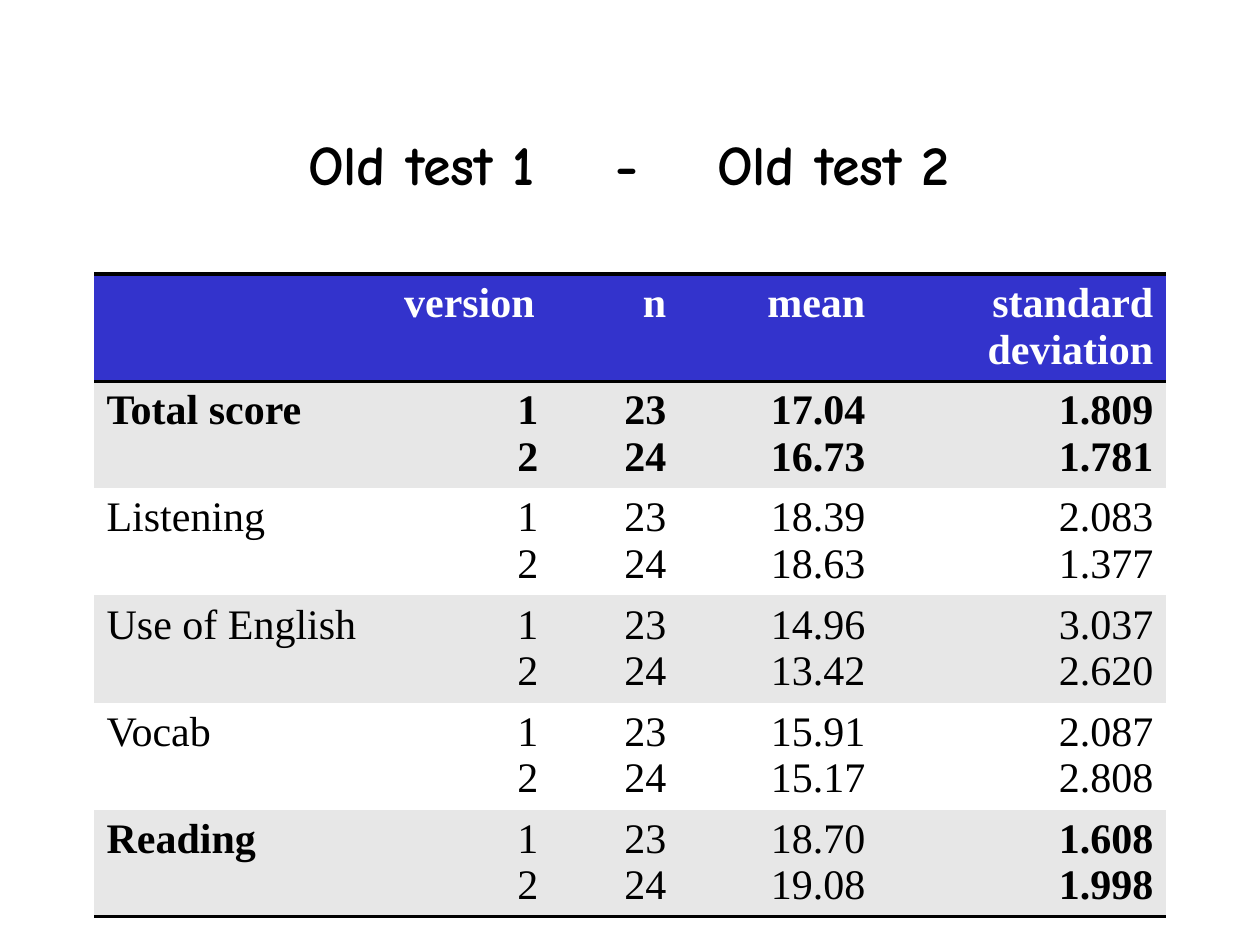
from dataclasses import dataclass

from lxml.etree import SubElement
from pptx import Presentation
from pptx.dml.color import RGBColor
from pptx.enum.text import MSO_ANCHOR, PP_ALIGN
from pptx.oxml import parse_xml
from pptx.oxml.ns import nsdecls, qn
from pptx.util import Emu, Pt

PX_PER_INCH = 126
BLACK, WHITE, BLUE, GREY = "000000", "FFFFFF", "3333CC", "E7E7E7"
NO_STYLE = "{2D5ABB26-0587-4C30-8999-92F81FD0307C}"


@dataclass
class Score:
    label: str
    means: tuple[str, str]
    deviations: tuple[str, str]
    bold_columns: tuple[int, ...] = ()


VERSIONS = ("1", "2")
COUNTS = ("23", "24")
HEADINGS = ("", "version", "n", "mean", "standard deviation")
COLUMN_WIDTHS = (294, 163, 128, 199, 288)
ROW_HEIGHTS = (106, 105, 106, 105, 106, 106)
SCORES = (
    Score("Total score", ("17.04", "16.73"), ("1.809", "1.781"), (0, 1, 2, 3, 4)),
    Score("Listening", ("18.39", "18.63"), ("2.083", "1.377")),
    Score("Use of English", ("14.96", "13.42"), ("3.037", "2.620")),
    Score("Vocab", ("15.91", "15.17"), ("2.087", "2.808")),
    Score("Reading", ("18.70", "19.08"), ("1.608", "1.998"), (0, 4)),
)


def px(length: int) -> Emu:
    return Emu(round(length * 914400 / PX_PER_INCH))


def color(value: str) -> RGBColor:
    return RGBColor.from_string(value)


def format_font(font, ink: str, **values) -> None:
    for name, value in values.items():
        setattr(font, name, value)
    font.color.rgb = color(ink)


def add_rule(cell, tag: str) -> None:
    rule = parse_xml(
        f'<a:{tag} {nsdecls("a")} w="25400"><a:solidFill>'
        f'<a:srgbClr val="{BLACK}"/></a:solidFill></a:{tag}>'
    )
    cell._tc.get_or_add_tcPr().insert(0, rule)


def fill_cell(cell, lines: tuple[str, ...], fill: str, ink: str,
              bold: bool, align: PP_ALIGN) -> None:
    cell.fill.solid()
    cell.fill.fore_color.rgb = color(fill)
    cell.margin_bottom = 0
    cell.text = "\n".join(lines)
    for paragraph in cell.text_frame.paragraphs:
        paragraph.alignment = align
        for run in paragraph.runs:
            format_font(run.font, ink, name="Times New Roman", size=Pt(24), bold=bold)


def add_title(slide) -> None:
    frame = slide.shapes.add_textbox(px(136), px(84), px(987), px(158)).text_frame
    settings = {"word_wrap": True, "vertical_anchor": MSO_ANCHOR.MIDDLE,
                "margin_left": px(172)}
    for name, value in settings.items():
        setattr(frame, name, value)
    paragraph = frame.paragraphs[0]
    # Tab stops place the dash and the second test
    stops = SubElement(paragraph._p.get_or_add_pPr(), qn("a:tabLst"))
    for position, align in ((319, "ctr"), (409, "l")):
        SubElement(stops, qn("a:tab"), pos=str(px(position)), algn=align)
    run = paragraph.add_run()
    run.text = "Old test 1\t-\tOld test 2"
    format_font(run.font, BLACK, name="Comic Neue", size=Pt(32), bold=True)


def add_score_table(slide) -> None:
    table = slide.shapes.add_table(
        len(ROW_HEIGHTS), len(HEADINGS), px(94), px(274),
        px(sum(COLUMN_WIDTHS)), px(sum(ROW_HEIGHTS))).table
    table._tbl.tblPr.find(qn("a:tableStyleId")).text = NO_STYLE
    for column, width in zip(table.columns, COLUMN_WIDTHS):
        column.width = px(width)
    for row, height in zip(table.rows, ROW_HEIGHTS):
        row.height = px(height)

    # Header
    for column, heading in enumerate(HEADINGS):
        align = PP_ALIGN.CENTER if heading == "version" else PP_ALIGN.RIGHT
        cell = table.cell(0, column)
        fill_cell(cell, (heading,), BLUE, WHITE, True, align)
        add_rule(cell, "lnB")
        add_rule(cell, "lnT")

    # Scores, in alternating bands
    for row, score in enumerate(SCORES, start=1):
        values = ((score.label,), VERSIONS, COUNTS, score.means, score.deviations)
        for column, lines in enumerate(values):
            cell = table.cell(row, column)
            fill_cell(cell, lines, GREY if row % 2 else WHITE, BLACK,
                      column in score.bold_columns,
                      PP_ALIGN.RIGHT if column else PP_ALIGN.LEFT)
            if row == len(SCORES):
                add_rule(cell, "lnB")


def main() -> None:
    deck = Presentation()
    deck.slide_width, deck.slide_height = px(1260), px(945)
    slide = deck.slides.add_slide(deck.slide_layouts[6])
    add_title(slide)
    add_score_table(slide)
    deck.save("out.pptx")


if __name__ == "__main__":
    main()
